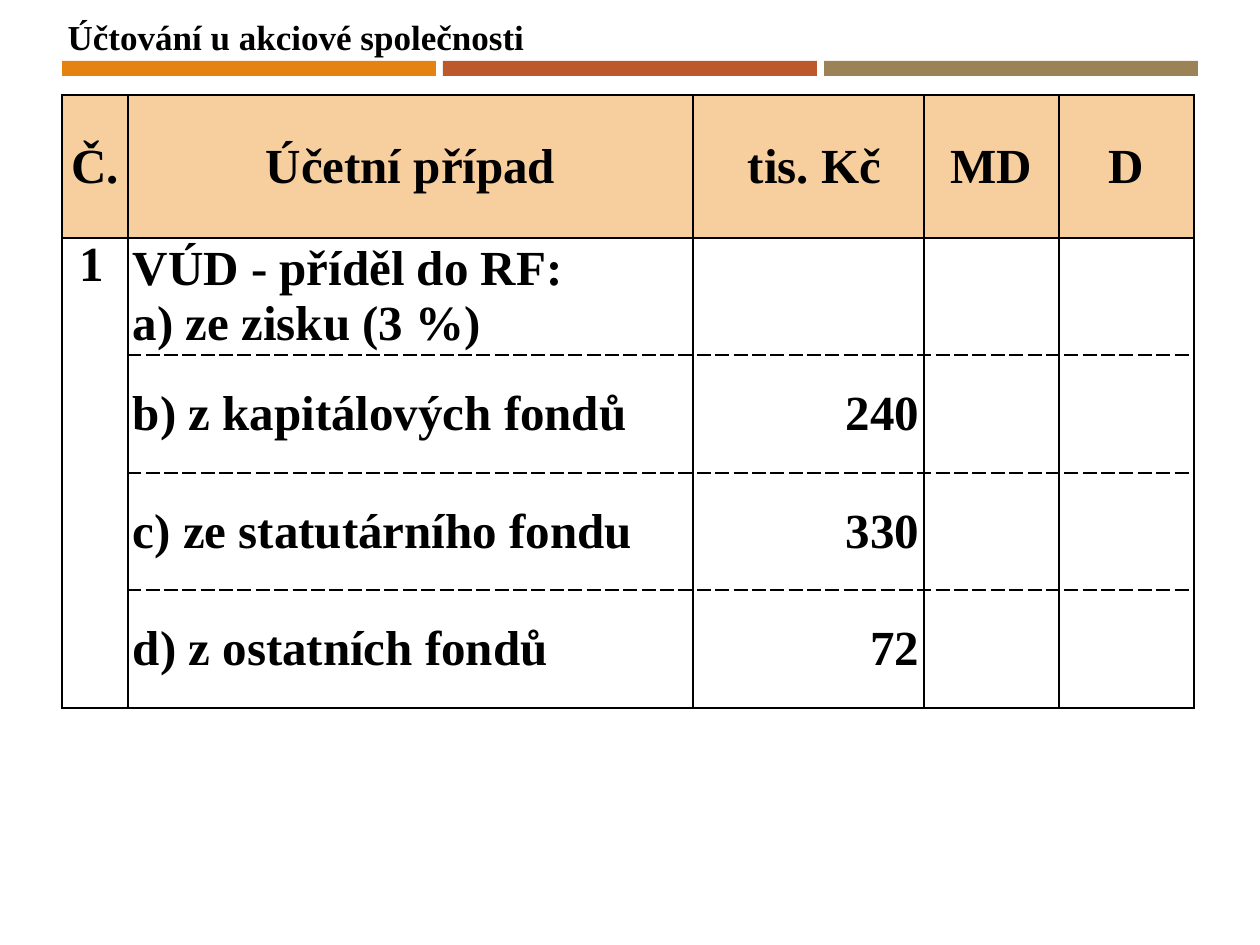
from typing import NamedTuple

import pptx
import pptx.dml.color
import pptx.enum.shapes
import pptx.enum.text
import pptx.oxml
import pptx.oxml.ns
import pptx.util

PX = 914400 / 126
FONT = "Times New Roman"
BLACK = "000000"
HEADER_FILL = "F7CE9D"
LEFT = 62
COLUMN_WIDTHS = [66, 565, 231, 135, 135]
ROW_HEIGHTS = [143, 117, 118, 117, 118]
ALIGN = pptx.enum.text.PP_ALIGN
ANCHOR = pptx.enum.text.MSO_ANCHOR


class Bar(NamedTuple):
    left: int
    color: str


class Entry(NamedTuple):
    number: str
    case: str
    amount: str


BARS = [
    Bar(LEFT + i * 381, color)
    for i, color in enumerate(["E48312", "BD582C", "9B8357"])
]
HEADERS = ["Č.", "Účetní případ", " tis. Kč", "MD", "D"]
ENTRIES = [
    Entry(" 1", "VÚD - příděl do RF:\na) ze zisku (3 %)", ""),
    Entry("", "b) z kapitálových fondů", "240"),
    Entry("", "c) ze statutárního fondu", "330"),
    Entry("", "d) z ostatních fondů", " 72"),
]
ENTRY_ALIGN = [ALIGN.LEFT, ALIGN.JUSTIFY, ALIGN.RIGHT, ALIGN.LEFT, ALIGN.LEFT]


def px(n: int) -> pptx.util.Emu:
    return pptx.util.Emu(round(n * PX))


def rgb(color: str) -> pptx.dml.color.RGBColor:
    return pptx.dml.color.RGBColor.from_string(color)


def format_text(tf, size: int, align) -> None:
    for p in tf.paragraphs:
        p.alignment = align
        p.font.name = FONT
        p.font.size = pptx.util.Pt(size)
        p.font.bold = True
        p.font.color.rgb = rgb(BLACK)


def draw_bar(s, bar: Bar) -> None:
    sp = s.shapes.add_shape(
        pptx.enum.shapes.MSO_SHAPE.RECTANGLE, px(bar.left), px(61), px(374), px(15)
    )
    sp.shadow.inherit = False
    sp.fill.solid()
    sp.fill.fore_color.rgb = rgb(bar.color)
    sp.line.fill.background()


def draw_title(s, text: str) -> None:
    sp = s.shapes.title
    sp.left, sp.top, sp.width, sp.height = px(55), px(9), px(485), px(55)
    tf = sp.text_frame
    tf.text = text
    tf.word_wrap = False
    tf.auto_size = pptx.enum.text.MSO_AUTO_SIZE.NONE
    tf.vertical_anchor = ANCHOR.TOP
    format_text(tf, 20, ALIGN.LEFT)


def set_borders(cell, dashed: str) -> None:
    tc_pr = cell._tc.get_or_add_tcPr()
    for side in "LRTB":
        dash = "dash" if side in dashed else "solid"
        tc_pr.append(pptx.oxml.parse_xml(
            f'<a:ln{side} {pptx.oxml.ns.nsdecls("a")} w="12700">'
            f'<a:solidFill><a:srgbClr val="{BLACK}"/></a:solidFill>'
            f'<a:prstDash val="{dash}"/></a:ln{side}>'
        ))


def fill_cell(cell, text: str, row: int, col: int) -> None:
    dashed = ""
    if col > 0 and row > 1:
        dashed += "T"
    if col > 0 and 0 < row < len(ENTRIES):
        dashed += "B"
    set_borders(cell, dashed)
    if row == 0:
        cell.fill.solid()
        cell.fill.fore_color.rgb = rgb(HEADER_FILL)
    else:
        cell.fill.background()
    cell.margin_left = cell.margin_right = px(5)
    cell.margin_top = cell.margin_bottom = 0
    cell.vertical_anchor = ANCHOR.TOP if row and col == 0 else ANCHOR.MIDDLE
    if text:
        cell.text = text
        format_text(cell.text_frame, 28, ENTRY_ALIGN[col] if row else ALIGN.CENTER)


def draw_table(s) -> None:
    rows = [HEADERS] + [[*entry, "", ""] for entry in ENTRIES]
    table = s.shapes.add_table(
        len(rows), len(HEADERS), px(LEFT), px(95),
        px(sum(COLUMN_WIDTHS)), px(sum(ROW_HEIGHTS)),
    ).table
    table.first_row = False
    table.horz_banding = False
    for column, width in zip(table.columns, COLUMN_WIDTHS):
        column.width = px(width)
    for row, height in zip(table.rows, ROW_HEIGHTS):
        row.height = px(height)
    for i, texts in enumerate(rows):
        for j, text in enumerate(texts):
            fill_cell(table.cell(i, j), text, i, j)
    table.cell(1, 0).merge(table.cell(len(ENTRIES), 0))


def main() -> None:
    prs = pptx.Presentation()
    prs.slide_width, prs.slide_height = px(1260), px(945)
    s = prs.slides.add_slide(prs.slide_layouts[5])
    for bar in BARS:
        draw_bar(s, bar)
    draw_table(s)
    draw_title(s, "Účtování u akciové společnosti")
    prs.save("out.pptx")


if __name__ == "__main__":
    main()
